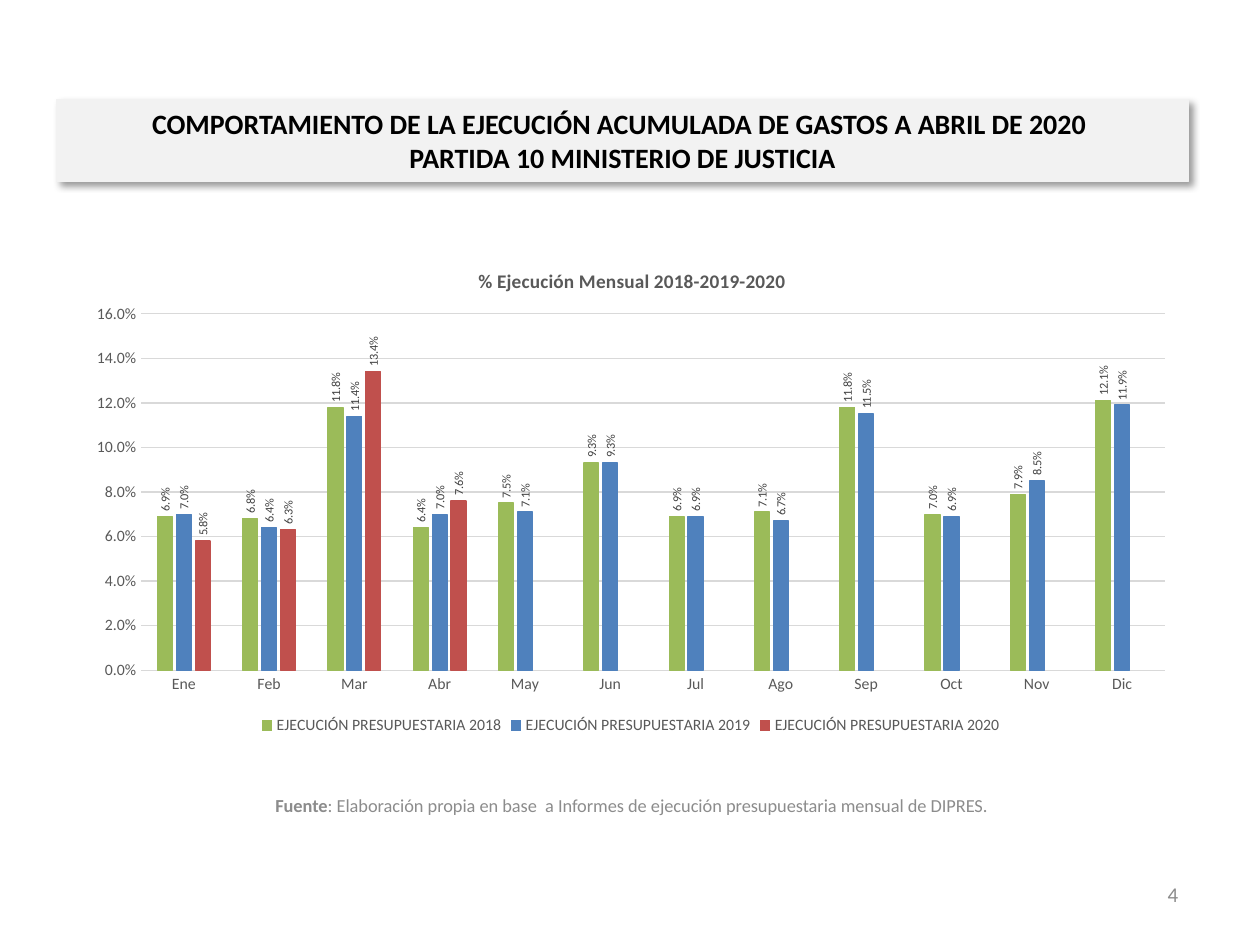
from lxml import etree
from pptx import Presentation
from pptx.chart.data import CategoryChartData
from pptx.dml.color import RGBColor
from pptx.enum.chart import XL_CHART_TYPE, XL_LABEL_POSITION, XL_LEGEND_POSITION, XL_TICK_MARK
from pptx.enum.text import MSO_ANCHOR, PP_ALIGN
from pptx.oxml import parse_xml
from pptx.oxml.ns import nsdecls, qn
from pptx.util import Pt

COLUMNS = XL_CHART_TYPE.COLUMN_CLUSTERED
OUTSIDE = XL_LABEL_POSITION.OUTSIDE_END
BOTTOM = XL_LEGEND_POSITION.BOTTOM
NO_TICK = XL_TICK_MARK.NONE
MIDDLE = MSO_ANCHOR.MIDDLE
CENTER, RIGHT = PP_ALIGN.CENTER, PP_ALIGN.RIGHT

BLACK = RGBColor(0x00, 0x00, 0x00)
PANEL = RGBColor(0xF2, 0xF2, 0xF2)
MUTED = RGBColor(0x8C, 0x8C, 0x8C)
DARK = RGBColor(0x40, 0x40, 0x40)
GRAY = RGBColor(0x59, 0x59, 0x59)
RULE = RGBColor(0xD9, 0xD9, 0xD9)
GREEN = RGBColor(0x9B, 0xBB, 0x59)
BLUE = RGBColor(0x4F, 0x81, 0xBD)
RED = RGBColor(0xC0, 0x50, 0x4D)

MONTHS = ["Ene", "Feb", "Mar", "Abr", "May", "Jun", "Jul", "Ago", "Sep", "Oct", "Nov", "Dic"]
PERCENTAGES = {
    2018: (GREEN, [6.9, 6.8, 11.8, 6.4, 7.5, 9.3, 6.9, 7.1, 11.8, 7.0, 7.9, 12.1]),
    2019: (BLUE, [7.0, 6.4, 11.4, 7.0, 7.1, 9.3, 6.9, 6.7, 11.5, 6.9, 8.5, 11.9]),
    2020: (RED, [5.8, 6.3, 13.4, 7.6] + [None] * 8),
}


def style_font(font, size, color, bold=False):
    for name, value in {"name": "Calibri", "size": Pt(size), "bold": bold}.items():
        setattr(font, name, value)
    font.color.rgb = color


def set_layout(element, **fractions):
    for old in element.findall(qn("c:layout")):
        element.remove(old)
    layout = etree.Element(qn("c:layout"))
    manual = etree.SubElement(layout, qn("c:manualLayout"))
    settings = {"xMode": "edge", "yMode": "edge", **fractions}
    if "w" in fractions:
        settings = {"layoutTarget": "inner", **settings}
    for name, value in settings.items():
        etree.SubElement(manual, qn(f"c:{name}")).set("val", str(value))
    text = element.find(qn("c:tx"))
    element.insert(0 if text is None else 1, layout)


deck = Presentation()
deck.slide_width, deck.slide_height = Pt(720), Pt(540)
page = deck.slides.add_slide(deck.slide_layouts[5])

heading = page.shapes.title
frame = {"left": 32.4, "top": 56.9, "width": 646.6, "height": 46.8}
for name, value in frame.items():
    setattr(heading, name, Pt(value))
heading.fill.solid()
heading.fill.fore_color.rgb = PANEL
heading.line.color.rgb = PANEL
heading.line.width = Pt(0.75)
heading.element.spPr.append(parse_xml(
    f'<a:effectLst {nsdecls("a")}><a:outerShdw blurRad="50800" dist="38100" dir="2700000" '
    'algn="tl" rotWithShape="0"><a:srgbClr val="000000"><a:alpha val="40000"/></a:srgbClr>'
    '</a:outerShdw></a:effectLst>'))
heading.text_frame.vertical_anchor = MIDDLE
para = heading.text_frame.paragraphs[0]
para.alignment = CENTER
lines = ["COMPORTAMIENTO DE LA EJECUCIÓN ACUMULADA DE GASTOS A ABRIL DE 2020 ",
         "PARTIDA 10 MINISTERIO DE JUSTICIA"]
for index, line in enumerate(lines):
    if index:
        para.add_line_break()
    span = para.add_run()
    span.text = line
    style_font(span.font, 16, BLACK, True)

chart_data = CategoryChartData(number_format="0.0%")
chart_data.categories = MONTHS
for year, (color, values) in PERCENTAGES.items():
    shares = [None if value is None else round(value / 100, 3) for value in values]
    chart_data.add_series(f"EJECUCIÓN PRESUPUESTARIA {year}", shares)
chart = page.shapes.add_chart(COLUMNS, Pt(42.5), Pt(139.7), Pt(635.8), Pt(283), chart_data).chart
style_font(chart.font, 10, BLACK)

chart.has_title = True
para = chart.chart_title.text_frame.paragraphs[0]
span = para.add_run()
span.text = "% Ejecución Mensual 2018-2019-2020"
style_font(span.font, 11, GRAY, True)
chart.chart_title.include_in_layout = False
title_element = chart.element.chart.find(qn("c:title")) if hasattr(chart, "element") else chart._chartSpace.chart.find(qn("c:title"))
set_layout(title_element, x=0.36, y=0.04)
set_layout(title_element.getparent().find(qn("c:plotArea")), x=0.06, y=0.14, w=0.92, h=0.72)

chart.has_legend = True
chart.legend.position = BOTTOM
chart.legend.include_in_layout = False
style_font(chart.legend.font, 9, GRAY)

for axis in (chart.category_axis, chart.value_axis):
    axis.major_tick_mark = axis.minor_tick_mark = NO_TICK
    style_font(axis.tick_labels.font, 9, GRAY)
chart.value_axis.format.line.fill.background()
chart.value_axis.minimum_scale = 0
chart.value_axis.maximum_scale = 0.16
chart.value_axis.major_unit = 0.02
chart.value_axis.tick_labels.number_format = "0.0%"
chart.value_axis.tick_labels.number_format_is_linked = False
for line in (chart.category_axis.format.line, chart.value_axis.major_gridlines.format.line):
    line.color.rgb = RULE
    line.width = Pt(0.75)

plot = chart.plots[0]
plot.vary_by_categories = False
plot.gap_width, plot.overlap = 219, -27
for series, (color, values) in zip(plot.series, PERCENTAGES.values()):
    series.format.fill.solid()
    series.format.fill.fore_color.rgb = color
    series.format.line.color.rgb = color
    series.format.line.width = Pt(0.75)
    labels = series.data_labels
    style_font(labels.font, 7, DARK)
    label_format = {"show_value": True, "number_format": "0.0%",
                    "number_format_is_linked": False, "position": OUTSIDE}
    for name, value in label_format.items():
        setattr(labels, name, value)
    for body in labels._element.iter(qn("a:bodyPr")):
        body.set("rot", "-5400000")
        body.set("vert", "horz")

notes = [
    ((30.2, 445.7, 661.7, 28.8), CENTER, 10.5,
     [("Fuente", True),
      (": Elaboración propia en base  a Informes de ejecución presupuestaria mensual de DIPRES.", False)]),
    ((512.6, 496.8, 167.8, 28.8), RIGHT, 12, [("4", False)]),
]
for bounds, alignment, size, spans in notes:
    box = page.shapes.add_textbox(*map(Pt, bounds))
    box.text_frame.word_wrap = True
    box.text_frame.vertical_anchor = MIDDLE
    para = box.text_frame.paragraphs[0]
    para.alignment = alignment
    for text, bold in spans:
        span = para.add_run()
        span.text = text
        style_font(span.font, size, MUTED, bold)

deck.save("out.pptx")
